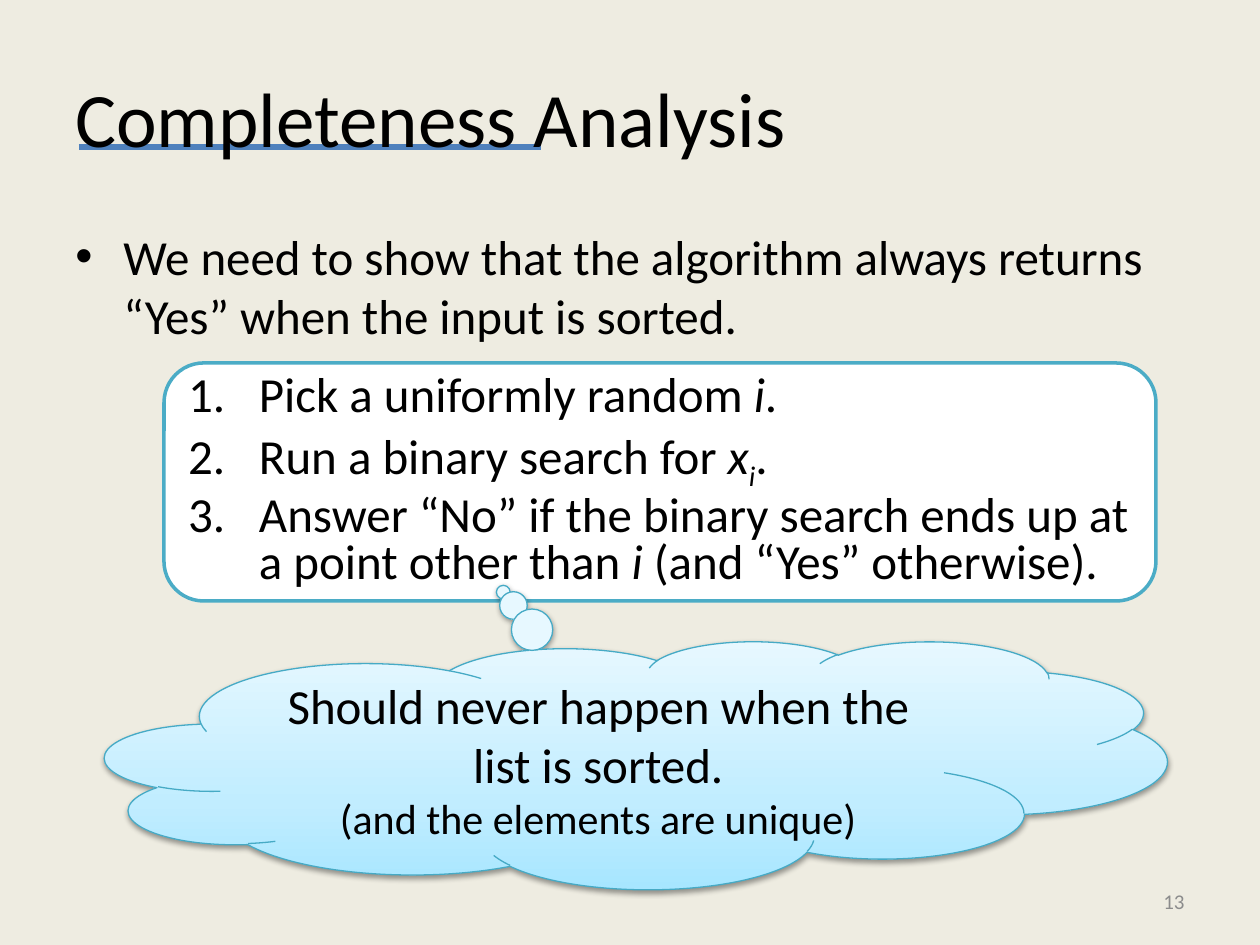
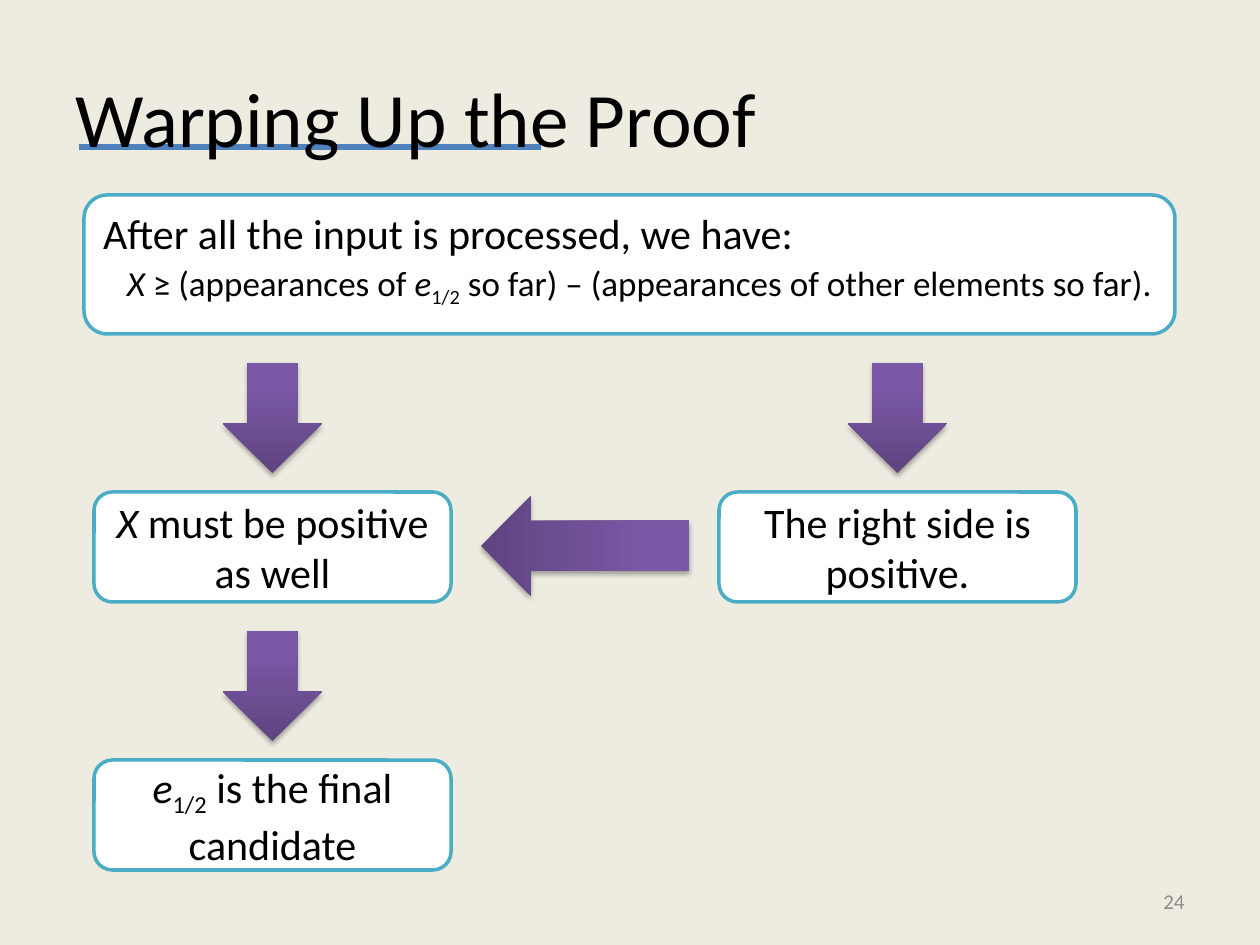
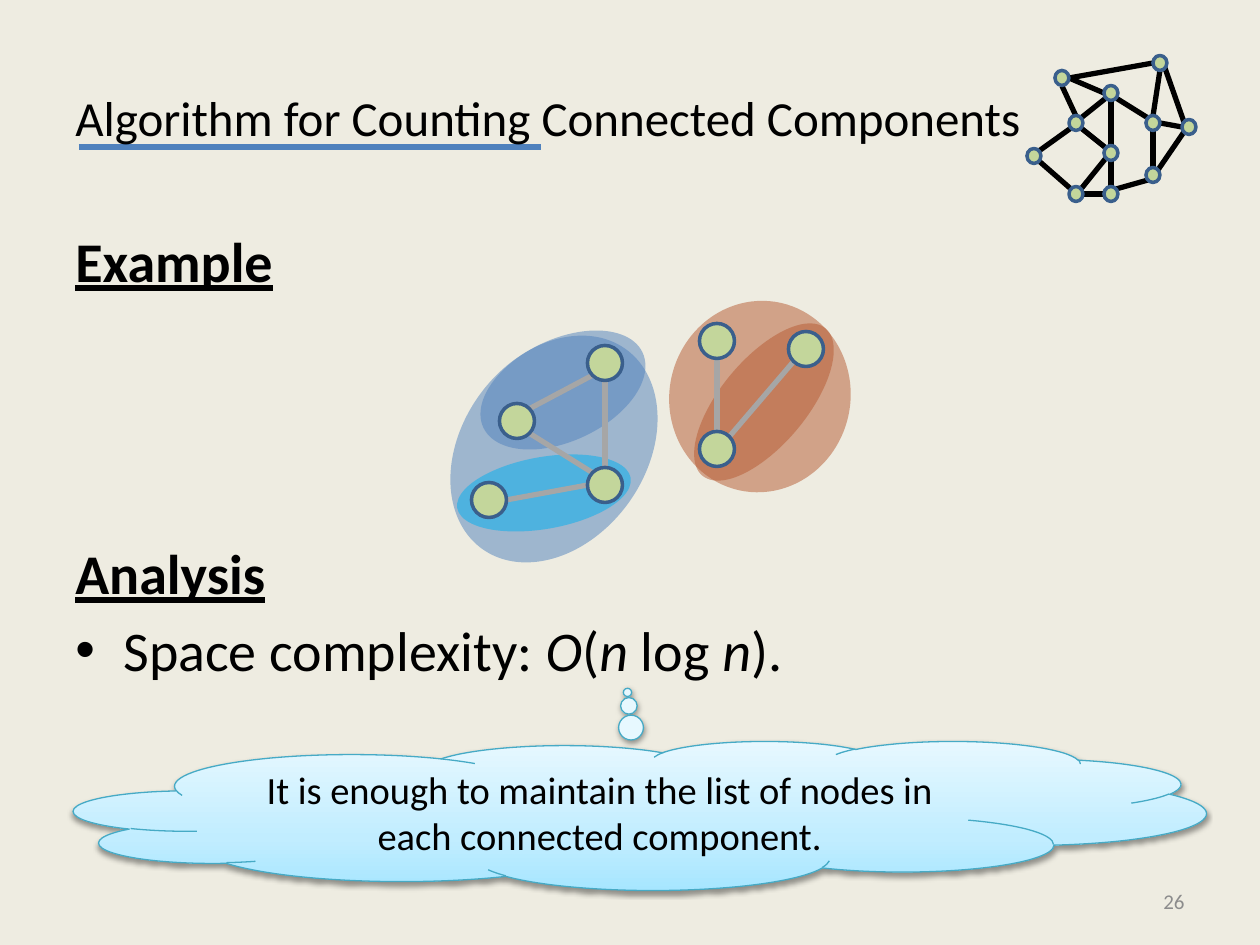
import copy
import math
from collections import namedtuple
from dataclasses import dataclass

from lxml import etree
from pptx import Presentation
from pptx import util as u
from pptx.dml import color
from pptx.enum import shapes as kinds
from pptx.enum import text as setting
from pptx.oxml import ns

SCALE = 914400 / 126
KIND = kinds.MSO_SHAPE
ALIGN = setting.PP_ALIGN
ANCHOR = setting.MSO_ANCHOR
Box = namedtuple("Box", "x y w h")


@dataclass(frozen=True)
class Theme:
    font: str = "Calibri"
    ink: str = "000000"
    paper: str = "EEECE1"
    white: str = "FFFFFF"
    rule: str = "4F81BD"
    panel_edge: str = "4BACC6"
    cloud_edge: str = "46AAC5"
    cloud: tuple = ((0, "A7E6FF"), (0.35, "C1EDFF"), (1, "E7F8FF"))
    arrow: tuple = ((0, "5F4480"), (0.8, "7B58A6"), (1, "7C57A8"))
    node: str = "C3D69B"
    node_edge: str = "3A5F8C"
    tree_edge: str = "A6A6A6"
    rust: str = "B65931"
    sky: str = "00B0F0"
    number: str = "8C8C8C"
    title_size: int = 44
    heading_size: int = 32
    body_size: int = 28
    box_size: int = 24
    cloud_size: int = 22
    formula_size: int = 20
    number_size: int = 12
    gap: float = 5.6


THEME = Theme()
PAGE = Box(0, 0, 1260, 945)
TITLE = Box(63, 38, 1134, 157)
BODY = Box(63, 220, 1134, 624)
BULLET = ("a:buChar", {"char": "•"}, 48)
NUMBER = ("a:buAutoNum", {"type": "arabicPeriod"}, 71)
STYLES = {
    "plain": {},
    "italic": {"italic": True},
    "sub": {},
    "italic sub": {"italic": True},
    "heading": {"bold": True, "underline": True},
}


def px(length):
    return u.Emu(round(length * SCALE))


def rgb(value):
    return color.RGBColor.from_string(value)


def within(area, x, y, w, h):
    return Box(area.x + x, area.y + y, w, h)


def apply(target, values):
    for name, value in values.items():
        setattr(target, name, value)


def add_bullet(para, bullet):
    tag, values, indent = bullet
    props = para._p.get_or_add_pPr()
    props.set("marL", str(px(indent)))
    props.set("indent", str(-px(indent)))
    etree.SubElement(props, ns.qn("a:buFont"), typeface="Arial")
    etree.SubElement(props, ns.qn(tag), values)


def write(shape, paras, size, ink=THEME.ink, anchor=ANCHOR.MIDDLE, bullet=None, **layout):
    frame = shape.text_frame
    apply(frame, {"word_wrap": True, "vertical_anchor": anchor})
    for index, runs in enumerate(paras):
        para = frame.paragraphs[0] if index == 0 else frame.add_paragraph()
        apply(para, {"alignment": ALIGN.LEFT, **layout})
        if bullet:
            add_bullet(para, bullet)
        for words, style in runs:
            span = para.add_run()
            span.text = words
            apply(span.font, {"name": THEME.font, "size": u.Pt(size), **STYLES[style]})
            span.font.color.rgb = rgb(ink)
            if "sub" in style:
                span.font._element.set("baseline", "-25000")
    return frame


def plain(*lines):
    return [[(line, "plain")] for line in lines]


def add_text(shapes, box, paras, size, **layout):
    shape = shapes.add_textbox(*map(px, box))
    return write(shape, paras, size, **layout)


def add_shape(shapes, kind, box, fill=None, edge=None, width=2):
    shape = shapes.add_shape(kind, *map(px, box))
    shape.shadow.inherit = False
    if fill:
        shape.fill.solid()
        shape.fill.fore_color.rgb = rgb(fill)
    if edge:
        shape.line.color.rgb = rgb(edge)
        shape.line.width = u.Pt(width)
    else:
        shape.line.fill.background()
    return shape


def add_line(shapes, start, end, ink):
    line = shapes.add_connector(kinds.MSO_CONNECTOR.STRAIGHT, *map(px, (*start, *end)))
    line.line.color.rgb = rgb(ink)
    line.line.width = u.Pt(3)
    etree.SubElement(line._element.spPr, ns.qn("a:effectLst"))


def shade(shape, stops, alpha, distance):
    shape.fill.gradient()
    shape.fill.gradient_angle = 90
    props = shape._element.spPr
    stop_list = props.find(".//" + ns.qn("a:gsLst"))
    stop_list.append(copy.deepcopy(stop_list[-1]))
    for stop, (position, tint) in zip(shape.fill.gradient_stops, stops):
        stop.position = position
        stop.color.rgb = rgb(tint)
    shadow = etree.SubElement(
        props.find(ns.qn("a:effectLst")), ns.qn("a:outerShdw"),
        blurRad=str(u.Pt(3.1)), dist=str(u.Pt(distance)), dir="5400000", rotWithShape="0")
    tint = etree.SubElement(shadow, ns.qn("a:srgbClr"), val=THEME.ink)
    etree.SubElement(tint, ns.qn("a:alpha"), val=str(alpha * 1000))


def add_page(deck, title, number, size=THEME.title_size):
    page = deck.slides.add_slide(deck.slide_layouts[6])
    add_line(page.shapes, (79, 147), (541, 147), THEME.rule)
    add_text(page.shapes, TITLE, plain(title), size)
    add_text(page.shapes, Box(903, 876, 294, 50), plain(number), THEME.number_size,
             ink=THEME.number, alignment=ALIGN.RIGHT)
    return page


def add_panel(shapes, box):
    return add_shape(shapes, KIND.ROUNDED_RECTANGLE, box, THEME.white, THEME.panel_edge)


def add_cloud(shapes, box, pointer, paras, size):
    cloud = add_shape(shapes, KIND.CLOUD_CALLOUT, box, edge=THEME.cloud_edge, width=0.75)
    cloud.adjustments[0], cloud.adjustments[1] = pointer
    shade(cloud, THEME.cloud, 38, 1.6)
    return write(cloud, paras, size, alignment=ALIGN.CENTER)


def add_arrow(shapes, box, rotation=0):
    arrow = add_shape(shapes, KIND.DOWN_ARROW, box)
    arrow.rotation = rotation
    shade(arrow, THEME.arrow, 35, 1.8)


def add_flow(shapes, area):
    steps = (
        (1, 0, [("The right side is positive.", "plain")]),
        (0, 0, [("X", "italic"), (" must be positive as well", "plain")]),
        (0, 1, [("e", "italic"), ("1/2", "sub"), (" is the final candidate", "plain")]),
    )
    for column, row, runs in steps:
        x, y = column * 625, row * 268
        add_arrow(shapes, within(area, x + 129, y, 99, 110))
        panel = add_panel(shapes, within(area, x, y + 129, 357, 110))
        write(panel, [runs], THEME.box_size, alignment=ALIGN.CENTER)
    add_arrow(shapes, within(area, 441, 79, 100, 208), 90)


def add_invariant(shapes, area):
    panel = add_panel(shapes, within(area, 30, 0, 1091, 139))
    write(panel, plain("After all the input is processed, we have:"), THEME.box_size,
          anchor=ANCHOR.TOP)
    formula = [
        ("X", "italic"), (" ≥ (appearances of ", "plain"), ("e", "italic"), ("1/2", "sub"),
        (" so far) – (appearances of other elements so far).", "plain"),
    ]
    add_text(shapes, within(area, 0, 60, 1171, 55), [formula], THEME.formula_size,
             anchor=ANCHOR.TOP, alignment=ALIGN.CENTER)


def rim(node, other, w, h):
    step = math.pi / 4
    angle = round(math.atan2(other[1] - node[1], other[0] - node[0]) / step) * step
    return (round(node[0] + w / 2 * math.cos(angle)), round(node[1] + h / 2 * math.sin(angle)))


def add_graph(shapes, area, nodes, edges, size, ink):
    group = shapes.add_group_shape().shapes
    w, h = size
    centres = {name: (area.x + x, area.y + y) for name, (x, y) in nodes.items()}
    for first, second in edges.split():
        start, end = centres[first], centres[second]
        add_line(group, rim(start, end, w, h), rim(end, start, w, h), ink)
    for x, y in centres.values():
        add_shape(group, KIND.OVAL, Box(x - w / 2, y - h / 2, w, h), THEME.node, THEME.node_edge)


def add_input_graph(shapes, area):
    nodes = {
        "A": (84, 98), "B": (49, 68), "C": (84, 38), "D": (49, 139), "E": (84, 139),
        "F": (7, 101), "G": (35, 23), "H": (126, 68), "I": (133, 8), "J": (126, 120),
        "K": (162, 72),
    }
    edges = "AB AC CB DA DE EA FB FD GB CG CH GI HI HJ EJ KI KH KJ"
    add_graph(shapes, area, nodes, edges, (14, 15), THEME.ink)


def add_components(shapes, area):
    blobs = (
        (214, 6, 192, 181, 282.7, THEME.rust),
        (-19, 57, 246, 184, 305.7, THEME.rule),
        (6, 157, 176, 72, 350.1, THEME.sky),
        (218, 59, 192, 86, 309.9, THEME.rust),
        (25, 39, 176, 102, 334.7, THEME.rule),
    )
    for x, y, w, h, rotation, tint in blobs:
        blob = add_shape(shapes, KIND.OVAL, within(area, x, y, w, h), tint)
        blob.rotation = rotation
        fill = blob._element.spPr.find(ns.qn("a:solidFill"))
        etree.SubElement(fill[0], ns.qn("a:alpha"), val="50000")
    nodes = {
        "P": (155, 185), "Q": (67, 121), "R": (155, 63), "S": (39, 200),
        "T": (267, 41), "U": (267, 149), "V": (356, 49),
    }
    add_graph(shapes, area, nodes, "QP RP RQ SP TU VU", (35, 35), THEME.tree_edge)


def completeness_page(deck):
    shapes = add_page(deck, "Completeness Analysis", "13").shapes
    claim = "We need to show that the algorithm always returns “Yes” when the input is sorted."
    add_text(shapes, BODY, plain(claim), THEME.body_size, anchor=ANCHOR.TOP, bullet=BULLET,
             space_before=u.Pt(THEME.gap))
    steps = [
        [("Pick a uniformly random ", "plain"), ("i", "italic"), (".", "plain")],
        [("Run a binary search for ", "plain"), ("x", "italic"), ("i", "italic sub"),
         (".", "plain")],
        [("Answer “No” if the binary search ends up at a point other than ", "plain"),
         ("i", "italic"), (" (and “Yes” otherwise).", "plain")],
    ]
    write(add_panel(shapes, Box(164, 363, 992, 238)), steps, THEME.body_size, bullet=NUMBER,
          line_spacing=0.8, space_before=u.Pt(THEME.gap))
    remark = plain("Should never happen when the list is sorted.", "(and the elements are unique)")
    frame = add_cloud(shapes, Box(105, 641, 1062, 248), (-0.125, -0.697), remark,
                      THEME.body_size)
    frame.paragraphs[1].runs[0].font.size = u.Pt(THEME.box_size)


def proof_page(deck):
    shapes = add_page(deck, "Warping Up the Proof", "24").shapes
    add_invariant(shapes, Box(54, 195, 1171, 139))
    add_flow(shapes, Box(94, 363, 982, 507))


def components_page(deck):
    shapes = add_page(deck, "Algorithm for Counting Connected Components", "26",
                      THEME.body_size).shapes
    add_components(shapes, Box(450, 300, 400, 262))
    complexity = [
        ("Space complexity: ", "plain"), ("O", "italic"), ("(", "plain"), ("n", "italic"),
        (" log ", "plain"), ("n", "italic"), (").", "plain"),
    ]
    paras = [[("Example", "heading")], [("Analysis", "heading")], complexity]
    frame = add_text(shapes, BODY, paras, THEME.heading_size, anchor=ANCHOR.TOP,
                     space_before=u.Pt(THEME.gap))
    frame.paragraphs[1].space_before = u.Pt(140)
    add_bullet(frame.paragraphs[2], BULLET)
    add_input_graph(shapes, Box(1027, 55, 169, 147))
    remark = plain("It is enough to maintain the list of nodes in each connected component.")
    add_cloud(shapes, Box(74, 741, 1132, 149), (-0.011, -0.826), remark, THEME.cloud_size)


def main():
    deck = Presentation()
    apply(deck, {"slide_width": px(PAGE.w), "slide_height": px(PAGE.h)})
    backdrop = deck.slide_master.background.fill
    backdrop.solid()
    backdrop.fore_color.rgb = rgb(THEME.paper)
    completeness_page(deck)
    proof_page(deck)
    components_page(deck)
    deck.save("out.pptx")


if __name__ == "__main__":
    main()
